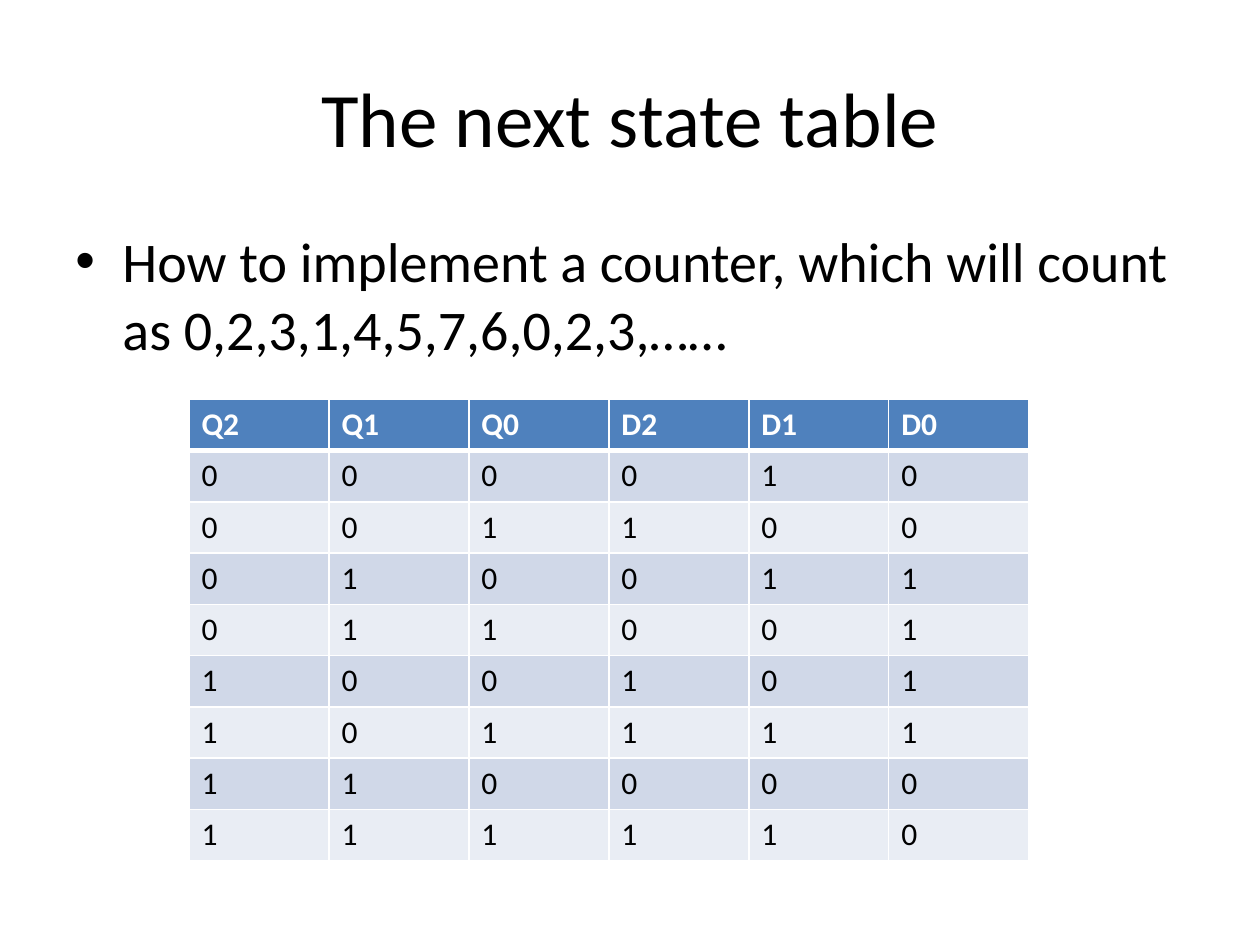
from lxml import etree
from pptx import Presentation
from pptx import util as u
from pptx.dml.color import RGBColor
from pptx.enum import text
from pptx.oxml import ns

BLACK = RGBColor(0x00, 0x00, 0x00)
WHITE = RGBColor(0xFF, 0xFF, 0xFF)
HEADER_BLUE = RGBColor(0x4F, 0x81, 0xBD)
BAND_DARK = RGBColor(0xD0, 0xD8, 0xE8)
BAND_LIGHT = RGBColor(0xE9, 0xED, 0xF4)


def add_run(paragraph, content, size, color, bold=False):
    run = paragraph.add_run()
    run.text = content
    run.font.name = "Calibri"
    run.font.size = u.Pt(size)
    run.font.bold = bold
    run.font.color.rgb = color


def add_border(cell, side, width):
    properties = cell._tc.get_or_add_tcPr()
    line = etree.SubElement(properties, ns.qn(f"a:ln{side}"), w=str(u.Pt(width)))
    fill = etree.SubElement(line, ns.qn("a:solidFill"))
    etree.SubElement(fill, ns.qn("a:srgbClr"), val=str(WHITE))


presentation = Presentation()
presentation.slide_width = u.Cm(25.4)
presentation.slide_height = u.Cm(19.05)
slide = presentation.slides.add_slide(presentation.slide_layouts[6])

title = slide.shapes.add_textbox(u.Cm(1.27), u.Cm(0.76), u.Cm(22.86), u.Cm(3.18))
title.text_frame.word_wrap = True
title.text_frame.vertical_anchor = text.MSO_ANCHOR.MIDDLE
paragraph = title.text_frame.paragraphs[0]
paragraph.alignment = text.PP_ALIGN.CENTER
add_run(paragraph, "The next state table", 44, BLACK)

question = slide.shapes.add_textbox(u.Cm(1.27), u.Cm(4.45), u.Cm(22.86), u.Cm(2.97))
question.text_frame.word_wrap = True
paragraph = question.text_frame.paragraphs[0]
paragraph.space_before = u.Pt(6.4)
properties = paragraph._p.get_or_add_pPr()
properties.set("marL", str(u.Cm(0.95)))
properties.set("indent", str(-u.Cm(0.95)))
etree.SubElement(properties, ns.qn("a:buFont"), typeface="Arial")
etree.SubElement(properties, ns.qn("a:buChar"), char="•")
add_run(
    paragraph,
    "How to implement a counter, which will count as 0,2,3,1,4,5,7,6,0,2,3,……",
    32,
    BLACK,
)

next_states = [2, 4, 3, 1, 5, 7, 0, 6]
rows = [["Q2", "Q1", "Q0", "D2", "D1", "D0"]]
for state, next_state in enumerate(next_states):
    rows.append(list(f"{state:03b}{next_state:03b}"))

table = slide.shapes.add_table(
    len(rows), len(rows[0]), u.Cm(3.81), u.Cm(8.05), u.Cm(16.93), u.Cm(9.3)
).table

for row_index, values in enumerate(rows):
    is_header = row_index == 0
    if is_header:
        fill_color = HEADER_BLUE
    else:
        fill_color = BAND_DARK if row_index % 2 else BAND_LIGHT
    for column_index, value in enumerate(values):
        cell = table.cell(row_index, column_index)
        add_border(cell, "L", 1)
        add_border(cell, "R", 1)
        add_border(cell, "T", 3 if row_index == 1 else 1)
        add_border(cell, "B", 3 if is_header else 1)
        cell.fill.solid()
        cell.fill.fore_color.rgb = fill_color
        add_run(
            cell.text_frame.paragraphs[0],
            value,
            18,
            WHITE if is_header else BLACK,
            is_header,
        )

presentation.save("out.pptx")
